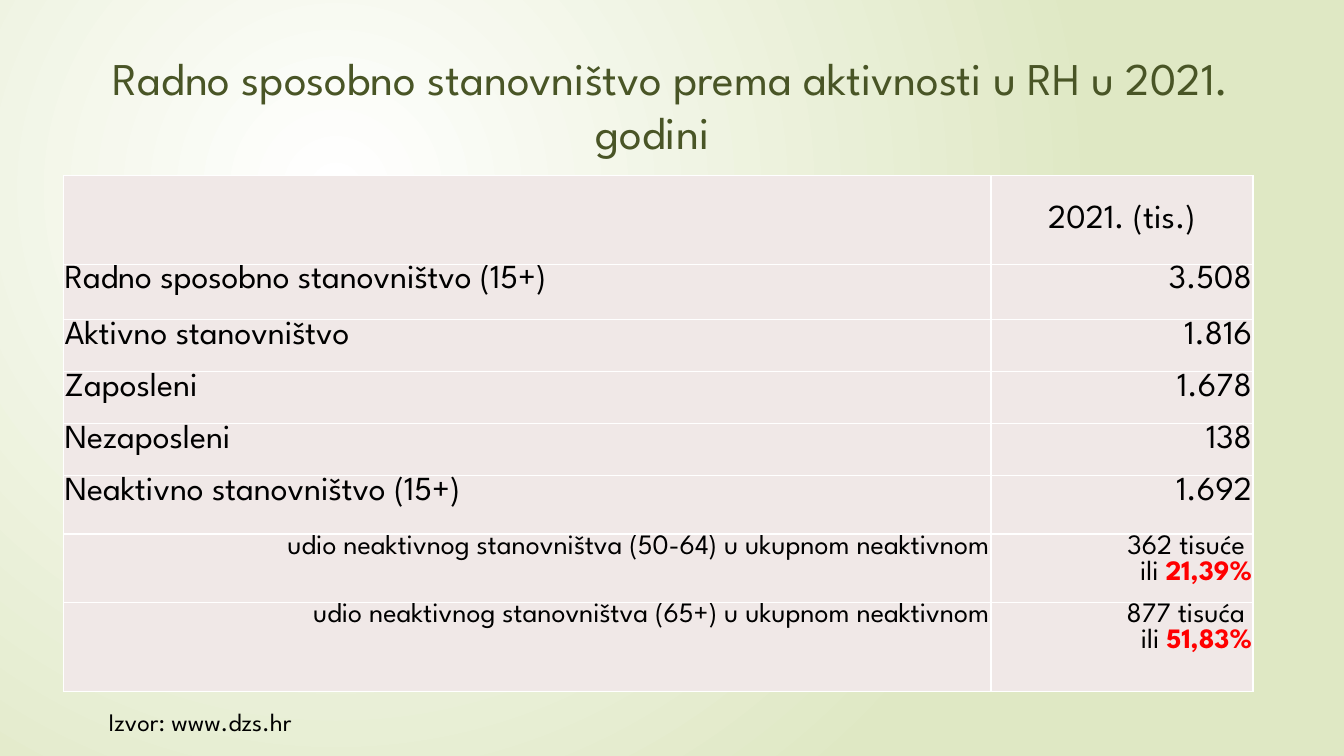
from lxml.etree import SubElement
from pptx import Presentation
from pptx.dml.color import RGBColor
from pptx.enum.text import MSO_ANCHOR, PP_ALIGN
from pptx.oxml import parse_xml
from pptx.oxml.ns import nsdecls, qn
from pptx.util import Pt

TITLE = "Radno sposobno stanovništvo prema aktivnosti u RH u 2021. godini\t"
SOURCE = "Izvor: www.dzs.hr"
HEADER = "2021. (tis.)"
TOTALS = [
    ("Radno sposobno stanovništvo (15+)", "3.508"),
    ("Aktivno stanovništvo", "1.816"),
    ("Zaposleni", "1.678"),
    ("Nezaposleni", "138"),
    ("Neaktivno stanovništvo (15+)", "1.692"),
]
SHARES = [
    ("udio neaktivnog stanovništva (50-64) u ukupnom neaktivnom", "362 tisuće ", "21,39%"),
    ("udio neaktivnog stanovništva (65+) u ukupnom neaktivnom", "877 tisuća ", "51,83%"),
]
COLORS = {
    "title": "495526", "text": "000000", "accent": "FF0000",
    "cell": "F0E8E7", "border": "FFFFFF",
    "glow": "FFFFFF", "edge": "DFE8C4",
}
FONT = "League Spartan"
COLUMN_WIDTHS = [662.4, 187.2]
ROW_HEIGHTS = [63.4, 39.6, 37.2, 37.2, 37.2, 41.6, 38.7, 64]


def write(paragraph, pieces, size, align=PP_ALIGN.LEFT):
    paragraph.alignment = align
    for text, color, bold in pieces:
        run = paragraph.add_run()
        run.text = text
        run.font.name = FONT
        run.font.size = Pt(size)
        run.font.bold = bold
        run.font.color.rgb = RGBColor.from_string(COLORS[color])


def add_text(slide, box, text, color, size, align):
    shape = slide.shapes.add_textbox(*[Pt(value) for value in box])
    frame = shape.text_frame
    frame.word_wrap = True
    frame.vertical_anchor = MSO_ANCHOR.MIDDLE
    write(frame.paragraphs[0], [(text, color, False)], size, align)
    return frame.paragraphs[0]


def style_cell(cell):
    cell.margin_left = cell.margin_right = cell.margin_top = Pt(0.75)
    cell.margin_bottom = Pt(0)
    properties = cell._tc.get_or_add_tcPr()
    for side in ("a:lnL", "a:lnR", "a:lnT", "a:lnB"):
        line = SubElement(properties, qn(side), w=str(Pt(1)))
        fill = SubElement(line, qn("a:solidFill"))
        SubElement(fill, qn("a:srgbClr"), val=COLORS["border"])
    cell.fill.solid()
    cell.fill.fore_color.rgb = RGBColor.from_string(COLORS["cell"])


def fill_cell(cell, lines, size, align):
    frame = cell.text_frame
    for index, pieces in enumerate(lines):
        paragraph = frame.add_paragraph() if index else frame.paragraphs[0]
        write(paragraph, pieces, size, align)


def set_background(slide):
    slide.background.fill.solid()
    properties = slide._element.cSld.bg.bgPr
    gradient = parse_xml(
        f'<a:gradFill {nsdecls("a")} rotWithShape="1"><a:gsLst>'
        f'<a:gs pos="0"><a:srgbClr val="{COLORS["glow"]}"/></a:gs>'
        f'<a:gs pos="100000"><a:srgbClr val="{COLORS["edge"]}"/></a:gs>'
        '</a:gsLst><a:path path="circle">'
        '<a:fillToRect l="50000" t="50000" r="100000" b="100000"/>'
        '</a:path></a:gradFill>'
    )
    properties.replace(properties[0], gradient)


def add_population_table(slide):
    graphic = slide.shapes.add_table(
        len(ROW_HEIGHTS), len(COLUMN_WIDTHS), Pt(45.4), Pt(125.3),
        Pt(sum(COLUMN_WIDTHS)), Pt(sum(ROW_HEIGHTS)),
    )
    table = graphic.table
    table.first_row = table.horz_banding = False
    for column, width in zip(table.columns, COLUMN_WIDTHS):
        column.width = Pt(width)
    for row, height in zip(table.rows, ROW_HEIGHTS):
        row.height = Pt(height)
    for cell in table.iter_cells():
        style_cell(cell)

    header = table.cell(0, 1)
    header.vertical_anchor = MSO_ANCHOR.MIDDLE
    fill_cell(header, [[(HEADER, "text", False)]], 24, PP_ALIGN.CENTER)
    for row, (label, value) in enumerate(TOTALS, 1):
        fill_cell(table.cell(row, 0), [[(label, "text", False)]], 24, PP_ALIGN.LEFT)
        fill_cell(table.cell(row, 1), [[(value, "text", False)]], 24, PP_ALIGN.RIGHT)
    for row, (label, amount, percent) in enumerate(SHARES, 1 + len(TOTALS)):
        share = [[(amount, "text", False)],
                 [("ili ", "text", False), (percent, "accent", True)]]
        fill_cell(table.cell(row, 0), [[(label, "text", False)]], 20, PP_ALIGN.RIGHT)
        fill_cell(table.cell(row, 1), share, 20, PP_ALIGN.RIGHT)


def main():
    presentation = Presentation()
    presentation.slide_width, presentation.slide_height = Pt(960), Pt(540)
    slide = presentation.slides.add_slide(presentation.slide_layouts[6])
    set_background(slide)
    title = add_text(slide, (37.4, 24.5, 884.2, 100.8), TITLE, "title", 32.4, PP_ALIGN.CENTER)
    title.line_spacing = Pt(38.6)
    add_population_table(slide)
    add_text(slide, (70.6, 501.1, 196.6, 28.8), SOURCE, "text", 18, PP_ALIGN.LEFT)
    presentation.save("out.pptx")


if __name__ == "__main__":
    main()
